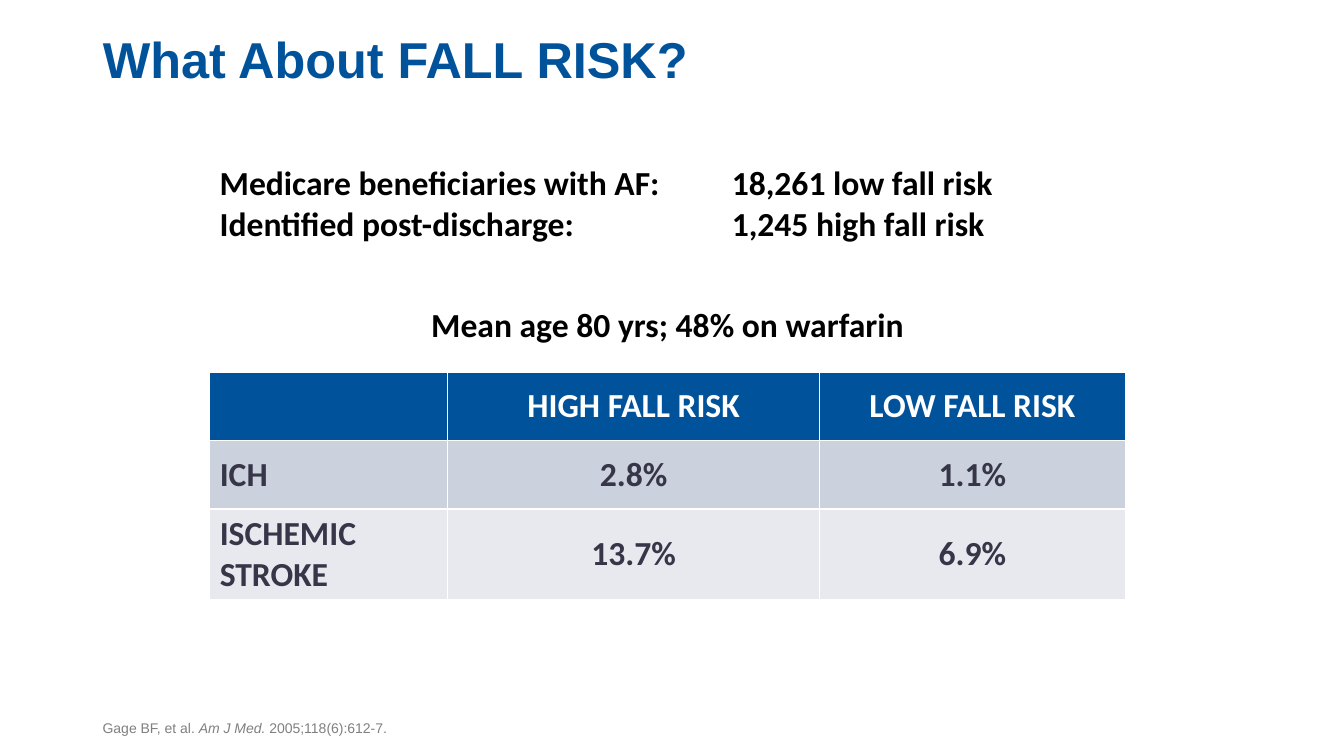
"""Build the fall risk slide with its outcome table."""
from dataclasses import dataclass

from lxml.etree import SubElement
from pptx import Presentation
from pptx.dml.color import RGBColor
from pptx.enum.text import MSO_ANCHOR as Anchor, PP_ALIGN as Align
from pptx.oxml.ns import qn
from pptx.util import Inches, Pt

BLUE, WHITE, BLACK, GREY, INK = "00539B", "FFFFFF", "000000", "808080", "373648"
FILLS = [BLUE, "CCD1DE", "E7E9EF"]
COLS = [2.36, 3.69, 3.03]
ROWS = [0.68, 0.68, 0.9]
DATA = [
    ["", "HIGH FALL RISK", "LOW FALL RISK"],
    ["ICH", "2.8%", "1.1%"],
    ["ISCHEMIC STROKE", "13.7%", "6.9%"],
]


@dataclass
class Face:
    name: str
    size: int
    tone: str
    bold: bool = True


@dataclass
class Note:
    box: tuple[float, float, float, float]
    lines: list[str]
    face: Face
    align: Align = Align.LEFT
    anchor: Anchor = Anchor.TOP
    tab: float = 0


BODY = Face("Calibri", 24, BLACK)
NOTES = [
    Note((2.08, 1.56, 9.08, 0.91),
         ["Medicare beneficiaries with AF:\t18,261 low fall risk",
          "Identified post-discharge:\t1,245 high fall risk"], BODY, tab=5.08),
    Note((2.08, 2.97, 9.08, 0.5), ["Mean age 80 yrs; 48% on warfarin"],
         BODY, Align.CENTER),
]
CITE = Note((0.92, 6.95, 11.5, 0.4), ["Gage BF, et al. "],
            Face("Arial", 10, GREY, False), anchor=Anchor.BOTTOM)


def color(tone: str) -> RGBColor:
    """Turn a hex string into a colour."""
    return RGBColor.from_string(tone)


def style(para, face: Face, align: Align = Align.LEFT) -> None:
    """Align a paragraph and format its runs."""
    para.alignment = align
    for item in [para, *para.runs]:
        font = item.font
        font.name, font.size, font.bold = face.name, Pt(face.size), face.bold
        font.color.rgb = color(face.tone)


def place(shape, box: tuple[float, float, float, float]) -> None:
    """Move and size a shape in inches."""
    shape.left, shape.top, shape.width, shape.height = map(Inches, box)


def write(slide, note: Note):
    """Add a text box and return its frame."""
    frame = slide.shapes.add_textbox(*map(Inches, note.box)).text_frame
    frame.word_wrap = True
    frame.vertical_anchor = note.anchor
    frame.text = "\n".join(note.lines)
    for para in frame.paragraphs:
        if note.tab:
            tabs = SubElement(para._p.get_or_add_pPr(), qn("a:tabLst"))
            SubElement(tabs, qn("a:tab"), pos=str(Inches(note.tab)), algn="l")
        style(para, note.face, note.align)
    return frame


def edge(cell) -> None:
    """Draw white borders around a filled cell."""
    props = cell._tc.get_or_add_tcPr()
    for spot, side in enumerate(("lnL", "lnR", "lnT", "lnB")):
        line = SubElement(props, qn(f"a:{side}"), w=str(Pt(1)))
        fill = SubElement(line, qn("a:solidFill"))
        SubElement(fill, qn("a:srgbClr"), val=WHITE)
        props.insert(spot, line)


def grid(slide) -> None:
    """Add the table of outcomes by fall risk."""
    table = slide.shapes.add_table(
        len(ROWS), len(COLS), Inches(2.08), Inches(3.69),
        Inches(sum(COLS)), Inches(sum(ROWS))).table
    for col, width in zip(table.columns, COLS):
        col.width = Inches(width)
    for r, (row, high) in enumerate(zip(table.rows, ROWS)):
        row.height = Inches(high)
        face = Face("Calibri", 24, INK if r else WHITE)
        for c, cell in enumerate(row.cells):
            cell.text = DATA[r][c]
            cell.vertical_anchor = Anchor.MIDDLE
            cell.fill.solid()
            cell.fill.fore_color.rgb = color(FILLS[r])
            edge(cell)
            style(cell.text_frame.paragraphs[0], face,
                  Align.CENTER if c else Align.LEFT)


def main() -> None:
    """Build and save the slide."""
    deck = Presentation()
    deck.slide_width, deck.slide_height = Inches(13.33), Inches(7.5)
    slide = deck.slides.add_slide(deck.slide_layouts[5])
    title = slide.shapes.title
    place(title, (0.92, 0.3, 11.5, 1.21))
    frame = title.text_frame
    frame.text = "What About FALL RISK?"
    frame.vertical_anchor = Anchor.TOP
    head = frame.paragraphs[0]
    head.line_spacing = 0.9
    style(head, Face("Arial", 36, BLUE))
    for note in NOTES:
        write(slide, note)
    grid(slide)
    cite = write(slide, CITE).paragraphs[0]
    for text in ("Am J Med.", " 2005;118(6):612-7."):
        cite.add_run().text = text
    style(cite, CITE.face)
    cite.runs[1].font.italic = True
    deck.save("out.pptx")


if __name__ == "__main__":
    main()
